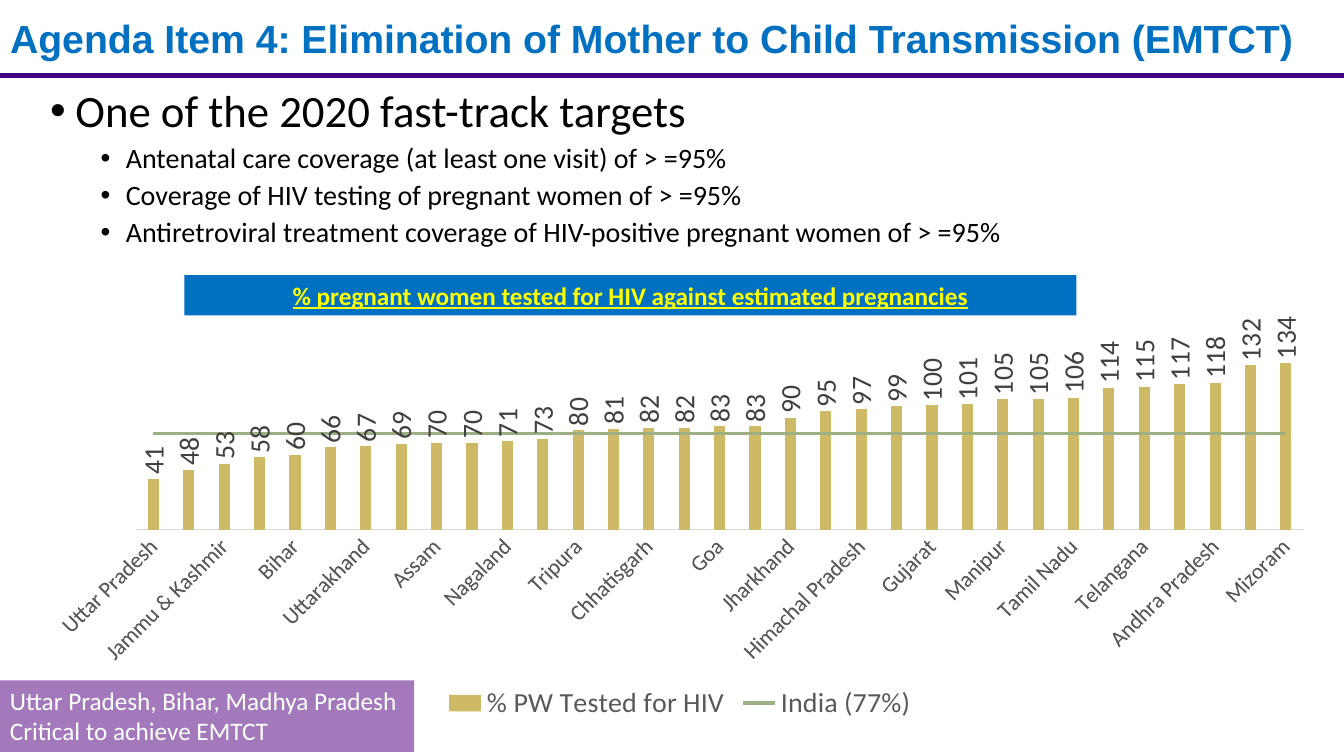
from dataclasses import dataclass

from lxml import etree
from pptx import Presentation
from pptx.chart.data import CategoryChartData
from pptx.dml.color import RGBColor
from pptx.enum.chart import XL_CHART_TYPE, XL_LABEL_POSITION, XL_LEGEND_POSITION, XL_MARKER_STYLE, XL_TICK_MARK
from pptx.enum.shapes import MSO_CONNECTOR, MSO_SHAPE
from pptx.enum.text import MSO_ANCHOR, MSO_AUTO_SIZE, PP_ALIGN
from pptx.oxml.ns import qn
from pptx.util import Pt

COLUMN, NO_TICK, NO_MARKER = XL_CHART_TYPE.COLUMN_CLUSTERED, XL_TICK_MARK.NONE, XL_MARKER_STYLE.NONE
LABEL_OUTSIDE, LEGEND_BOTTOM = XL_LABEL_POSITION.OUTSIDE_END, XL_LEGEND_POSITION.BOTTOM
STRAIGHT, RECTANGLE = MSO_CONNECTOR.STRAIGHT, MSO_SHAPE.RECTANGLE
TOP, MIDDLE, NO_AUTOFIT = MSO_ANCHOR.TOP, MSO_ANCHOR.MIDDLE, MSO_AUTO_SIZE.NONE
LEFT, CENTER = PP_ALIGN.LEFT, PP_ALIGN.CENTER
TITLE_ONLY = 5


@dataclass(frozen=True)
class Theme:
    heading_font: str = "Arial"
    body_font: str = "Calibri"
    blue: str = "0070C0"
    rule: str = "410082"
    black: str = "000000"
    white: str = "FFFFFF"
    yellow: str = "FFFF00"
    purple: str = "A379BB"
    gold: str = "CEB966"
    green: str = "9CB084"
    label: str = "404040"
    axis_text: str = "595959"
    axis_line: str = "D9D9D9"
    title_size: int = 28
    lead_size: int = 32
    text_size: int = 20
    box_size: int = 18
    category_size: int = 16


@dataclass(frozen=True)
class Bullet:
    text: str
    level: int = 1
    size: int = Theme.text_size
    indent: int = 54
    space_before: int = 5


@dataclass(frozen=True)
class Box:
    text: str
    frame: tuple[float, float, float, float]
    fill: str
    color: str
    align: PP_ALIGN = LEFT
    emphasis: bool = False


THEME = Theme()
BULLETS = [
    Bullet("One of the 2020 fast-track targets", 0, THEME.lead_size, 18, 10),
    Bullet("Antenatal care coverage (at least one visit) of > =95%"),
    Bullet("Coverage of HIV testing of pregnant women of > =95%"),
    Bullet("Antiretroviral treatment coverage of HIV-positive pregnant women of > =95%"),
]
BOXES = [
    Box("% pregnant women tested for HIV against estimated pregnancies",
        (131.76, 196.56, 637.2, 28.8), THEME.blue, THEME.yellow, CENTER, True),
    Box("Uttar Pradesh, Bihar, Madhya Pradesh Critical to achieve EMTCT",
        (0, 486, 295.92, 51.12), THEME.purple, THEME.white),
]
TESTED = {
    "Uttar Pradesh": 41, "Daman & Diu": 48, "Jammu & Kashmir": 53, "Arunachal Pradesh": 58, "Bihar": 60,
    "Madhya Pradesh": 66, "Uttarakhand": 67, "Odisha": 69, "Assam": 70, "Sikkim": 70, "Nagaland": 71,
    "Rajasthan": 73, "Tripura": 80, "Delhi": 81, "Chhatisgarh": 82, "Haryana": 82, "Goa": 83,
    "Meghalaya": 83, "Jharkhand": 90, "Kerala": 95, "Himachal Pradesh": 97, "A & N Islands": 99,
    "Gujarat": 100, "Punjab": 101, "Manipur": 105, "West Bengal": 105, "Tamil Nadu": 106,
    "Maharashtra": 114, "Telangana": 115, "Karnataka": 117, "Andhra Pradesh": 118,
    "Chandigarh": 132, "Mizoram": 134,
}


def format_font(font, size: int, color: str, name: str = THEME.body_font) -> None:
    font.size, font.name = Pt(size), name
    font.color.rgb = RGBColor.from_string(color)


def format_line(line, color: str, width: float) -> None:
    line.color.rgb, line.width = RGBColor.from_string(color), Pt(width)


def format_fill(fill, color: str) -> None:
    fill.solid()
    fill.fore_color.rgb = RGBColor.from_string(color)


def write(para, text: str, *, size: int, color: str, font: str = THEME.body_font, bold: bool = False,
          underline: bool = False, align: PP_ALIGN = LEFT, spacing: float = 1.0, before: int = 0) -> None:
    span = para.add_run()
    span.text = text
    format_font(span.font, size, color, font)
    span.font.bold, span.font.underline = bold, underline
    para.alignment, para.line_spacing, para.space_before = align, spacing, Pt(before)


def add_header(page) -> None:
    rule = page.shapes.add_connector(STRAIGHT, Pt(0), Pt(54), Pt(960), Pt(54))
    format_line(rule.line, THEME.rule, 3)
    etree.SubElement(rule._element.spPr, qn("a:effectLst"))
    title = page.shapes.title
    title.left, title.top, title.width, title.height = Pt(0), Pt(9.36), Pt(951.84), Pt(38.88)
    title.text_frame.auto_size, title.text_frame.vertical_anchor = NO_AUTOFIT, MIDDLE
    write(title.text_frame.paragraphs[0], "Agenda Item 4: Elimination of Mother to Child Transmission (EMTCT)",
          size=THEME.title_size, color=THEME.blue, font=THEME.heading_font, bold=True, spacing=0.9)


def add_bullets(page) -> None:
    frame = page.shapes.add_textbox(Pt(28.8), Pt(59.76), Pt(900), Pt(109.44)).text_frame
    frame.word_wrap = True
    for index, bullet in enumerate(BULLETS):
        para = frame.add_paragraph() if index else frame.paragraphs[0]
        para.level = bullet.level
        write(para, bullet.text, size=bullet.size, color=THEME.black, spacing=0.9, before=bullet.space_before)
        properties = para._p.get_or_add_pPr()
        properties.set("marL", str(Pt(bullet.indent)))
        properties.set("indent", str(Pt(-18)))
        etree.SubElement(properties, qn("a:buFont"), typeface=THEME.heading_font)
        etree.SubElement(properties, qn("a:buChar"), char="•")


def add_box(page, box: Box) -> None:
    shape = page.shapes.add_shape(RECTANGLE, *map(Pt, box.frame))
    shape.shadow.inherit = False
    format_fill(shape.fill, box.fill)
    shape.line.fill.background()
    shape.text_frame.word_wrap, shape.text_frame.vertical_anchor = True, TOP
    write(shape.text_frame.paragraphs[0], box.text, size=THEME.box_size, color=box.color,
          bold=box.emphasis, underline=box.emphasis, align=box.align)


def rotate_text(element, degrees: int) -> None:
    element.find(qn("c:txPr")).find(qn("a:bodyPr")).set("rot", str(degrees * 60000))


def move_last_series_to_line(chart) -> None:
    bars = chart.plots[0]._element
    series = bars.findall(qn("c:ser"))[-1]
    for bar_only in series.findall(qn("c:invertIfNegative")):
        series.remove(bar_only)
    lines = etree.SubElement(bars.getparent(), qn("c:lineChart"))
    bars.addnext(lines)
    etree.SubElement(lines, qn("c:grouping"), val="standard")
    etree.SubElement(lines, qn("c:varyColors"), val="0")
    lines.append(series)
    etree.SubElement(lines, qn("c:marker"), val="1")
    for axis in bars.findall(qn("c:axId")):
        etree.SubElement(lines, qn("c:axId"), val=axis.get("val"))


def add_testing_chart(page) -> None:
    data = CategoryChartData(number_format="0")
    data.categories = list(TESTED)
    data.add_series("% PW Tested for HIV", list(TESTED.values()))
    data.add_series("India (77%)", [77] * len(TESTED))
    chart = page.shapes.add_chart(COLUMN, Pt(21.6), Pt(226.08), Pt(928.08), Pt(292.32), data).chart
    format_font(chart.font, THEME.text_size, THEME.black)
    chart.has_title = False
    move_last_series_to_line(chart)
    columns, average = chart.plots
    columns.vary_by_categories, columns.gap_width, columns.overlap = False, 219, -27
    tested, india = columns.series[0], average.series[0]
    format_fill(tested.format.fill, THEME.gold)
    labels = tested.data_labels
    labels.show_value, labels.position = True, LABEL_OUTSIDE
    labels.number_format, labels.number_format_is_linked = "0", False
    format_font(labels.font, THEME.text_size, THEME.label)
    rotate_text(labels._element, -90)
    india.smooth, india.marker.style = False, NO_MARKER
    format_line(india.format.line, THEME.green, 2.25)
    states, percent = chart.category_axis, chart.value_axis
    states.major_tick_mark = states.minor_tick_mark = NO_TICK
    format_line(states.format.line, THEME.axis_line, 0.75)
    format_font(states.tick_labels.font, THEME.category_size, THEME.axis_text)
    rotate_text(states._element, -45)
    percent.minimum_scale, percent.maximum_scale = 0, 160
    percent.has_major_gridlines = percent.visible = False
    chart.has_legend = True
    chart.legend.position, chart.legend.include_in_layout = LEGEND_BOTTOM, False
    format_font(chart.legend.font, THEME.text_size, THEME.axis_text)


def main() -> None:
    deck = Presentation()
    deck.slide_width, deck.slide_height = Pt(960), Pt(540)
    page = deck.slides.add_slide(deck.slide_layouts[TITLE_ONLY])
    add_header(page)
    add_bullets(page)
    add_testing_chart(page)
    for box in BOXES:
        add_box(page, box)
    deck.save("out.pptx")


if __name__ == "__main__":
    main()
